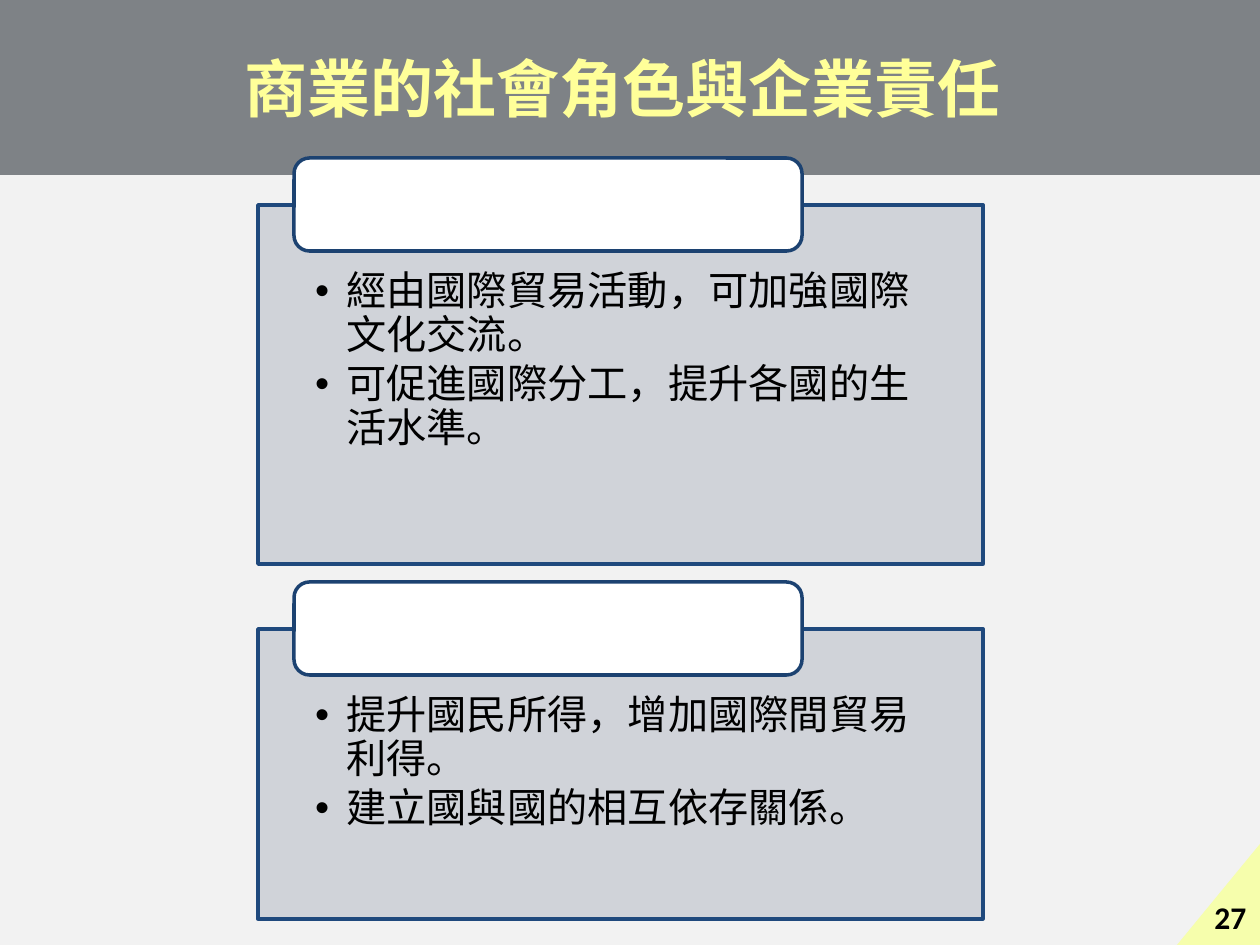
import pptx
import pptx.dml.color
import pptx.enum.shapes
import pptx.enum.text
import pptx.oxml.ns
import pptx.util
from lxml import etree

RGB = pptx.dml.color.RGBColor
SHAPE = pptx.enum.shapes.MSO_SHAPE
ANCHOR = pptx.enum.text.MSO_ANCHOR
ALIGN = pptx.enum.text.PP_ALIGN
qn = pptx.oxml.ns.qn

PAGE_GREY = RGB(0xF2, 0xF2, 0xF2)
BAND_DARK = RGB(0x0C, 0x14, 0x1C)
TITLE_YELLOW = RGB(0xFF, 0xFF, 0x99)
PANEL_GREY = RGB(0xCD, 0xD0, 0xD7)
PANEL_BLUE = RGB(0x1F, 0x49, 0x7D)
TAB_BLUE = RGB(0x1C, 0x42, 0x71)
CORNER_YELLOW = RGB(0xF6, 0xFE, 0xAC)
WHITE = RGB(0xFF, 0xFF, 0xFF)
BLACK = RGB(0, 0, 0)

CJK_FONT = "Noto Sans CJK SC"
PX_PER_INCH = 126

PANELS = [
    ((258, 205, 725, 359),
     ["經由國際貿易活動，可加強國際文化交流。",
      "可促進國際分工，提升各國的生活水準。"]),
    ((258, 629, 725, 290),
     ["提升國民所得，增加國際間貿易利得。",
      "建立國與國的相互依存關係。"]),
]


def px(length):
    return pptx.util.Emu(round(length * 914400 / PX_PER_INCH))


def apply(target, formats):
    for name, value in formats.items():
        setattr(target, name, value)


def set_insets(frame, left, top, right, bottom):
    apply(frame, {"margin_left": px(left), "margin_top": px(top),
                  "margin_right": px(right), "margin_bottom": px(bottom)})


def add_filled(page, kind, box, color, opacity=100, outline=None):
    shape = page.shapes.add_shape(kind, *map(px, box))
    shape.shadow.inherit = False
    shape.fill.solid()
    shape.fill.fore_color.rgb = color
    if opacity < 100:
        tint = shape._element.spPr.find(qn("a:solidFill"))[0]
        etree.SubElement(tint, qn("a:alpha"), val=str(opacity * 1000))
    if outline is None:
        shape.line.fill.background()
    else:
        shape.line.color.rgb = outline
        shape.line.width = pptx.util.Pt(2)
    return shape


def write(para, text, size, color, font, bold=False):
    """Add one span, naming its font for Latin and East Asian text."""
    span = para.add_run()
    span.text = text
    apply(span.font, {"size": pptx.util.Pt(size), "name": font, "bold": bold})
    span.font.color.rgb = color
    latin = span._r.get_or_add_rPr().find(qn("a:latin"))
    latin.addnext(latin.makeelement(qn("a:ea"), {"typeface": font}))


def add_bullet(para):
    props = para._p.get_or_add_pPr()
    props.set("marL", str(px(31)))
    props.set("indent", str(-px(31)))
    etree.SubElement(props, qn("a:buFont"), typeface="Arial")
    etree.SubElement(props, qn("a:buChar"), char="•")


def add_header(page, box):
    left, top, width, height = box
    add_filled(page, SHAPE.RECTANGLE, box, BAND_DARK, opacity=50)
    title = page.shapes.add_textbox(px(left + 64), px(top + 22),
                                    px(width - 144), px(height - 66))
    frame = title.text_frame
    apply(frame, {"word_wrap": True, "vertical_anchor": ANCHOR.BOTTOM})
    set_insets(frame, 10, 5, 10, 5)
    para = frame.paragraphs[0]
    apply(para, {"alignment": ALIGN.CENTER, "line_spacing": 0.9})
    write(para, "商業的社會角色與企業責任", 36, TITLE_YELLOW, CJK_FONT, True)


def add_panel(page, box, points):
    """Bulleted panel with an empty tab over its top edge."""
    left, top, width, height = box
    panel = add_filled(page, SHAPE.RECTANGLE, box, PANEL_GREY, 90, PANEL_BLUE)
    frame = panel.text_frame
    apply(frame, {"word_wrap": True, "vertical_anchor": ANCHOR.TOP})
    set_insets(frame, 57, 66, 57, 23)
    for index, point in enumerate(points):
        para = frame.add_paragraph() if index else frame.paragraphs[0]
        apply(para, {"alignment": ALIGN.LEFT, "line_spacing": 0.9,
                     "space_after": pptx.util.Pt(3.5)})
        add_bullet(para)
        write(para, point, 23, BLACK, CJK_FONT)
    add_filled(page, SHAPE.ROUNDED_RECTANGLE, (left + 36, top - 47, 508, 93),
               WHITE, outline=TAB_BLUE)


def add_page_corner(page, box):
    left, top, width, height = box
    corner = add_filled(page, SHAPE.RIGHT_TRIANGLE, box, CORNER_YELLOW)
    corner._element.spPr.find(qn("a:xfrm")).set("flipH", "1")
    number = page.shapes.add_textbox(px(left + 25), px(top + 48),
                                     px(width - 25), px(height - 51))
    frame = number.text_frame
    frame.word_wrap = False
    write(frame.paragraphs[0], "27", 18, BLACK, "Calibri", True)


def main():
    deck = pptx.Presentation()
    apply(deck, {"slide_width": px(1260), "slide_height": px(945)})
    page = deck.slides.add_slide(deck.slide_layouts[6])
    page.background.fill.solid()
    page.background.fill.fore_color.rgb = PAGE_GREY
    add_header(page, (0, -1, 1260, 176))
    for box, points in PANELS:
        add_panel(page, box, points)
    add_page_corner(page, (1177, 844, 83, 101))
    deck.save("out.pptx")


if __name__ == "__main__":
    main()
